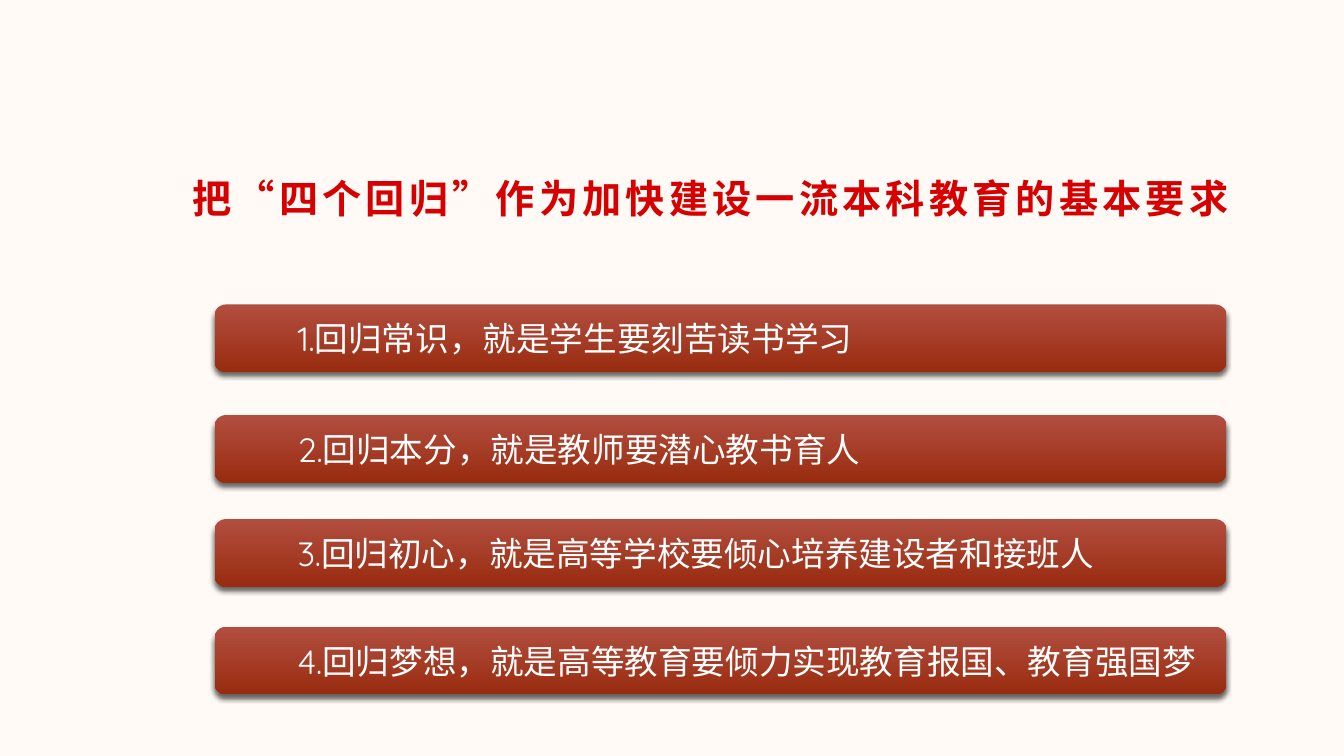
from lxml import etree
from pptx import Presentation
from pptx.dml.color import RGBColor
from pptx.enum.shapes import MSO_SHAPE
from pptx.enum.text import MSO_ANCHOR, PP_ALIGN
from pptx.oxml.ns import qn
from pptx.util import Pt

ROUNDED = MSO_SHAPE.ROUNDED_RECTANGLE
MIDDLE = MSO_ANCHOR.MIDDLE
LEFT = PP_ALIGN.LEFT

COLORS = {
    "background": "FFFAF5",
    "heading": "D70000",
    "bar_top": "B24E40",
    "bar_bottom": "992C0F",
    "bar_text": "FFFFFF",
    "shadow": "000000",
}
CHINESE = "Noto Sans CJK SC"
NUMERAL = "Quicksand"

HEADING = "把“四个回归”作为加快建设一流本科教育的基本要求"
RETURNS = [
    "回归常识，就是学生要刻苦读书学习",
    "回归本分，就是教师要潜心教书育人",
    "回归初心，就是高等学校要倾心培养建设者和接班人",
    "回归梦想，就是高等教育要倾力实现教育报国、教育强国梦",
]
BAR_TOPS = [217.5, 296.5, 370.8, 447.8]

HEADING_FRAME = {"vertical_anchor": MIDDLE, "word_wrap": True}
BAR_FRAME = {
    "vertical_anchor": MIDDLE,
    "word_wrap": True,
    "margin_left": Pt(56.9),
    "margin_right": Pt(7.2),
    "margin_top": Pt(3.6),
    "margin_bottom": Pt(3.6),
}


def rgb(name):
    return RGBColor.from_string(COLORS[name])


def apply(target, values):
    for name, value in values.items():
        setattr(target, name, value)


def add_run(paragraph, text, typeface, color, size, bold=False, spacing=0):
    run = paragraph.add_run()
    run.text = text
    apply(run.font, {"name": typeface, "size": Pt(size), "bold": bold})
    run.font.color.rgb = rgb(color)
    properties = run.font._element
    properties.set("lang", "zh-CN")
    if spacing:
        properties.set("spc", str(spacing * 100))
    east_asian = etree.Element(qn("a:ea"), typeface=typeface)
    properties.find(qn("a:latin")).addnext(east_asian)


def add_shadow(shape):
    shape.shadow.inherit = False
    effects = shape._element.spPr.find(qn("a:effectLst"))
    shadow = etree.SubElement(
        effects, qn("a:outerShdw"), blurRad=str(Pt(4)), dist=str(Pt(3)),
        dir="5400000", algn="t", rotWithShape="0")
    color = etree.SubElement(shadow, qn("a:srgbClr"), val=COLORS["shadow"])
    etree.SubElement(color, qn("a:alpha"), val="60000")


def heading(slide, left, top, width, height):
    box = slide.shapes.add_textbox(Pt(left), Pt(top), Pt(width), Pt(height))
    apply(box.text_frame, HEADING_FRAME)
    add_run(box.text_frame.paragraphs[0], HEADING, CHINESE, "heading", 28,
            bold=True, spacing=3)


def return_bar(slide, left, top, width, height, number, statement):
    bar = slide.shapes.add_shape(ROUNDED, Pt(left), Pt(top), Pt(width), Pt(height))
    bar.adjustments[0] = 0.167
    bar.line.fill.background()

    # Gradient from top to bottom
    bar.fill.gradient()
    bar.fill.gradient_angle = 270
    for stop, name in zip(bar.fill.gradient_stops, ("bar_top", "bar_bottom")):
        stop.color.rgb = rgb(name)
    add_shadow(bar)

    # Numeral and statement
    apply(bar.text_frame, BAR_FRAME)
    line = bar.text_frame.paragraphs[0]
    line.alignment = LEFT
    add_run(line, f"{number}.", NUMERAL, "bar_text", 24)
    add_run(line, statement, CHINESE, "bar_text", 24)


def main():
    deck = Presentation()
    apply(deck, {"slide_width": Pt(960), "slide_height": Pt(540)})
    slide = deck.slides.add_slide(deck.slide_layouts[6])
    slide.background.fill.solid()
    slide.background.fill.fore_color.rgb = rgb("background")

    heading(slide, 130.3, 121, 788.4, 41)
    for number, (top, statement) in enumerate(zip(BAR_TOPS, RETURNS), 1):
        return_bar(slide, 153.3, top, 722.9, 48.2, number, statement)

    deck.save("out.pptx")


if __name__ == "__main__":
    main()
